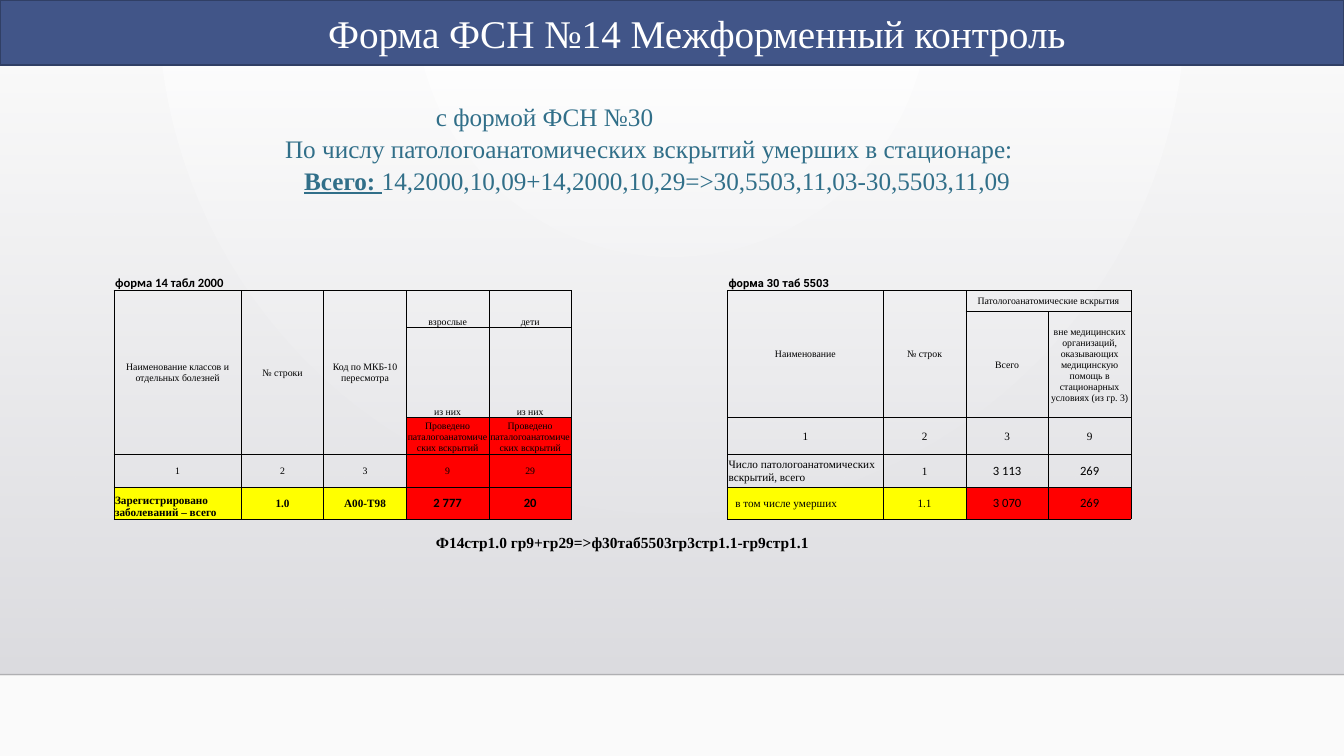
from dataclasses import dataclass
from typing import Optional

import lxml.etree
import pptx
import pptx.dml.color
import pptx.enum.shapes
import pptx.enum.text
import pptx.oxml
import pptx.oxml.ns
import pptx.util

Cm = pptx.util.Cm
Pt = pptx.util.Pt
Align = pptx.enum.text.PP_ALIGN
Anchor = pptx.enum.text.MSO_ANCHOR
qn = pptx.oxml.ns.qn
NAMESPACE = pptx.oxml.ns.nsdecls("a")


@dataclass(frozen=True)
class Theme:
    bar: str = "415588"
    bar_line: str = "303F65"
    title: str = "FFFFFF"
    body: str = "316F89"
    ink: str = "000000"
    red: str = "FF0000"
    yellow: str = "FFFF00"
    serif: str = "Times New Roman"
    sans: str = "Calibri"
    label: str = "Roboto"
    title_size: int = 28
    body_size: int = 18
    formula_size: int = 11
    value_size: int = 9
    row_size: int = 8
    head_size: int = 7


THEME = Theme()


@dataclass(frozen=True)
class CellText:
    row: int
    column: int
    text: str
    size: int = THEME.head_size
    font: str = THEME.serif
    bold: bool = False
    fill: Optional[str] = None
    align: Align = Align.CENTER
    anchor: Anchor = Anchor.MIDDLE
    rows: int = 1
    columns: int = 1
    left_margin: float = 0.03


@dataclass(frozen=True)
class BodyLine:
    indent: float
    text: str
    lead: str = ""


BODY_LINES = [
    BodyLine(4.43, "с формой ФСН №30"),
    BodyLine(0.63, "По числу патологоанатомических вскрытий умерших в стационаре:"),
    BodyLine(1.11, "14,2000,10,09+14,2000,10,29=>30,5503,11,03-30,5503,11,09", "Всего: "),
]

COLUMN_WIDTHS = [3.21] + [2.08] * 4 + [3.93] * 2 + [2.08] * 3
ROW_HEIGHTS = [0.41, 0.53, 0.41, 2.27, 0.93, 0.81, 0.81, 0.36, 0.46]
GRID_ROWS = range(1, 7)
GAP_COLUMN = 5

ROW, VALUE = THEME.row_size, THEME.value_size
SANS, RED, YELLOW = THEME.sans, THEME.red, THEME.yellow
BOTTOM, LEFT = Anchor.BOTTOM, Align.LEFT

CELLS = [
    # Form 14, table 2000
    CellText(0, 0, "форма 14 табл 2000", VALUE, SANS, True, None, LEFT, BOTTOM, columns=2),
    CellText(1, 0, "Наименование классов и отдельных болезней", rows=4),
    CellText(1, 1, "№ строки", rows=4),
    CellText(1, 2, "Код по МКБ-10 пересмотра", rows=4),
    CellText(1, 3, "взрослые", anchor=BOTTOM, rows=2),
    CellText(1, 4, "дети", anchor=BOTTOM, rows=2),
    *[CellText(3, column, "из них", anchor=BOTTOM) for column in (3, 4)],
    *[CellText(4, column, "Проведено паталогоанатомических вскрытий", fill=RED) for column in (3, 4)],
    *[CellText(5, column, text) for column, text in enumerate("123")],
    *[CellText(5, column, text, fill=RED) for column, text in ((3, "9"), (4, "29"))],
    CellText(6, 0, "Зарегистрировано заболеваний – всего", ROW, bold=True, fill=YELLOW,
             align=LEFT, anchor=BOTTOM),
    CellText(6, 1, "1.0", ROW, bold=True, fill=YELLOW),
    CellText(6, 2, "А00-Т98", ROW, bold=True, fill=YELLOW),
    CellText(6, 3, "2 777", VALUE, SANS, True, RED),
    CellText(6, 4, "20", VALUE, SANS, True, RED),
    # Form 30, table 5503
    CellText(0, 6, "форма 30 таб 5503", ROW, THEME.label, True, None, LEFT, BOTTOM, columns=2),
    CellText(1, 6, "Наименование", rows=3),
    CellText(1, 7, "№ строк", rows=3),
    CellText(1, 8, "Патологоанатомические вскрытия", columns=2),
    CellText(2, 8, "Всего", rows=2),
    CellText(2, 9, "вне медицинских организаций, оказывающих медицинскую помощь "
                   "в стационарных условиях (из гр. 3)", rows=2),
    *[CellText(4, column, text, ROW) for column, text in enumerate("1239", 6)],
    CellText(5, 6, "Число патологоанатомических вскрытий, всего", ROW, align=LEFT),
    CellText(5, 7, "1", ROW),
    CellText(5, 8, "3 113", VALUE, SANS),
    CellText(5, 9, "269", VALUE, SANS),
    CellText(6, 6, "в том числе умерших", ROW, fill=YELLOW, align=LEFT, left_margin=0.2),
    CellText(6, 7, "1.1", ROW, fill=YELLOW),
    CellText(6, 8, "3 070", VALUE, SANS, fill=RED),
    CellText(6, 9, "269", VALUE, SANS, fill=RED),
    # Check formula under both forms
    CellText(8, 0, "Ф14стр1.0 гр9+гр29=>ф30таб5503гр3стр1.1-гр9стр1.1", THEME.formula_size,
             bold=True, anchor=BOTTOM, columns=10),
]


def color(value: str) -> pptx.dml.color.RGBColor:
    return pptx.dml.color.RGBColor.from_string(value)


def add_run(paragraph, text: str, size: int, font: str, ink: str, bold: bool = False,
            underline: bool = False) -> None:
    run = paragraph.add_run()
    run.text = text
    run.font.size, run.font.name = Pt(size), font
    run.font.color.rgb = color(ink)
    run.font.bold, run.font.underline = bold, underline


def place(shape, left: float, top: float, width: float, height: float) -> None:
    shape.left, shape.top, shape.width, shape.height = map(Cm, (left, top, width, height))


def draw_backdrop(slide) -> None:
    # Circular page gradient
    slide.background.fill.solid()
    fill = slide.background.element.find(".//" + qn("a:solidFill"))
    fill.getparent().replace(fill, pptx.oxml.parse_xml(
        f'<a:gradFill {NAMESPACE} rotWithShape="1"><a:gsLst>'
        '<a:gs pos="0"><a:srgbClr val="FFFFFF"/></a:gs>'
        '<a:gs pos="100000"><a:srgbClr val="FAFAFA"/></a:gs></a:gsLst>'
        '<a:path path="circle"><a:fillToRect l="43000" t="0" r="43000" b="100000"/></a:path>'
        '</a:gradFill>'))
    # Panel fading in towards the bottom
    panel = slide.shapes.add_shape(pptx.enum.shapes.MSO_SHAPE.RECTANGLE,
                                   0, Cm(1.3), Cm(33.87), Cm(15.7))
    panel.shadow.inherit = False
    panel.line.fill.background()
    panel.fill.solid()
    fill = panel.element.spPr.find(qn("a:solidFill"))
    fill.getparent().replace(fill, pptx.oxml.parse_xml(
        f'<a:gradFill {NAMESPACE}><a:gsLst>'
        '<a:gs pos="0"><a:srgbClr val="DCDCE0"><a:alpha val="0"/></a:srgbClr></a:gs>'
        '<a:gs pos="100000"><a:srgbClr val="DEDEE2"/></a:gs></a:gsLst>'
        '<a:lin ang="5400000" scaled="0"/></a:gradFill>'))
    # Lower edge of the panel
    edge = slide.shapes.add_connector(pptx.enum.shapes.MSO_CONNECTOR.STRAIGHT,
                                      0, Cm(17), Cm(33.87), Cm(17))
    edge.line.width = Pt(1)
    edge.line.color.rgb = color("000001")
    alpha = lxml.etree.SubElement(edge.element.find(".//" + qn("a:srgbClr")), qn("a:alpha"))
    alpha.set("val", "20000")
    lxml.etree.SubElement(edge.element.spPr, qn("a:effectLst"))
    for shape in (panel, edge):
        slide.shapes.title.element.addprevious(shape.element)


def fill_title(title) -> None:
    place(title, 0, 0, 33.87, 1.63)
    title.fill.solid()
    title.fill.fore_color.rgb = color(THEME.bar)
    title.line.color.rgb = color(THEME.bar_line)
    title.line.width = Pt(1.25)
    frame = title.text_frame
    frame.auto_size = pptx.enum.text.MSO_AUTO_SIZE.NONE
    frame.vertical_anchor = Anchor.MIDDLE
    frame.margin_left = Cm(1.5)
    frame.paragraphs[0].alignment = Align.CENTER
    add_run(frame.paragraphs[0], "Форма ФСН №14 Межформенный контроль",
            THEME.title_size, THEME.serif, THEME.title)


def fill_body(body) -> None:
    place(body, 6.3, 2.39, 24.41, 3.33)
    frame = body.text_frame
    frame.auto_size = pptx.enum.text.MSO_AUTO_SIZE.NONE
    frame.vertical_anchor = Anchor.TOP
    for index, line in enumerate(BODY_LINES):
        paragraph = frame.add_paragraph() if index else frame.paragraphs[0]
        properties = paragraph._p.get_or_add_pPr()
        properties.set("marL", str(Cm(line.indent)))
        properties.set("indent", "0")
        lxml.etree.SubElement(properties, qn("a:buNone"))
        paragraph.alignment = Align.JUSTIFY
        paragraph.space_before, paragraph.line_spacing = Pt(0), 1.05
        if line.lead:
            add_run(paragraph, line.lead, THEME.body_size, THEME.serif, THEME.body, True, True)
        add_run(paragraph, line.text, THEME.body_size, THEME.serif, THEME.body)


def prepare_cell(cell, bordered: bool) -> None:
    cell.margin_left = cell.margin_right = cell.margin_top = Cm(0.03)
    cell.margin_bottom = 0
    if bordered:
        for side in ("lnL", "lnR", "lnT", "lnB"):
            cell._tc.get_or_add_tcPr().append(pptx.oxml.parse_xml(
                f'<a:{side} {NAMESPACE} w="6350"><a:solidFill><a:srgbClr val="{THEME.ink}"/>'
                f'</a:solidFill></a:{side}>'))
    cell.fill.background()
    end = lxml.etree.SubElement(cell.text_frame.paragraphs[0]._p, qn("a:endParaRPr"))
    end.set("sz", str(THEME.head_size * 100))


def fill_cell(table, item: CellText) -> None:
    cell = table.cell(item.row, item.column)
    if item.rows * item.columns > 1:
        cell.merge(table.cell(item.row + item.rows - 1, item.column + item.columns - 1))
    cell.margin_left = Cm(item.left_margin)
    cell.vertical_anchor = item.anchor
    if item.fill:
        cell.fill.solid()
        cell.fill.fore_color.rgb = color(item.fill)
    paragraph = cell.text_frame.paragraphs[0]
    paragraph.alignment = item.align
    add_run(paragraph, item.text, item.size, item.font, THEME.ink, item.bold)


def draw_forms_table(slide) -> None:
    frame = slide.shapes.add_table(len(ROW_HEIGHTS), len(COLUMN_WIDTHS), Cm(2.87), Cm(6.9),
                                   Cm(sum(COLUMN_WIDTHS)), Cm(sum(ROW_HEIGHTS)))
    table = frame.table
    table.first_row = table.horz_banding = False
    # Plain style without grid
    frame.element.find(".//" + qn("a:tableStyleId")).text = "{2D5ABB26-0587-4C30-8999-92F81FD0307C}"
    for column, width in zip(table.columns, COLUMN_WIDTHS):
        column.width = Cm(width)
    for row_index, (row, height) in enumerate(zip(table.rows, ROW_HEIGHTS)):
        row.height = Cm(height)
        for column_index, cell in enumerate(row.cells):
            prepare_cell(cell, row_index in GRID_ROWS and column_index != GAP_COLUMN)
    for item in CELLS:
        fill_cell(table, item)


def main() -> None:
    presentation = pptx.Presentation()
    presentation.slide_width, presentation.slide_height = Cm(33.87), Cm(19.05)
    slide = presentation.slides.add_slide(presentation.slide_layouts[1])
    draw_backdrop(slide)
    fill_title(slide.shapes.title)
    fill_body(slide.placeholders[1])
    draw_forms_table(slide)
    presentation.save("out.pptx")


if __name__ == "__main__":
    main()
